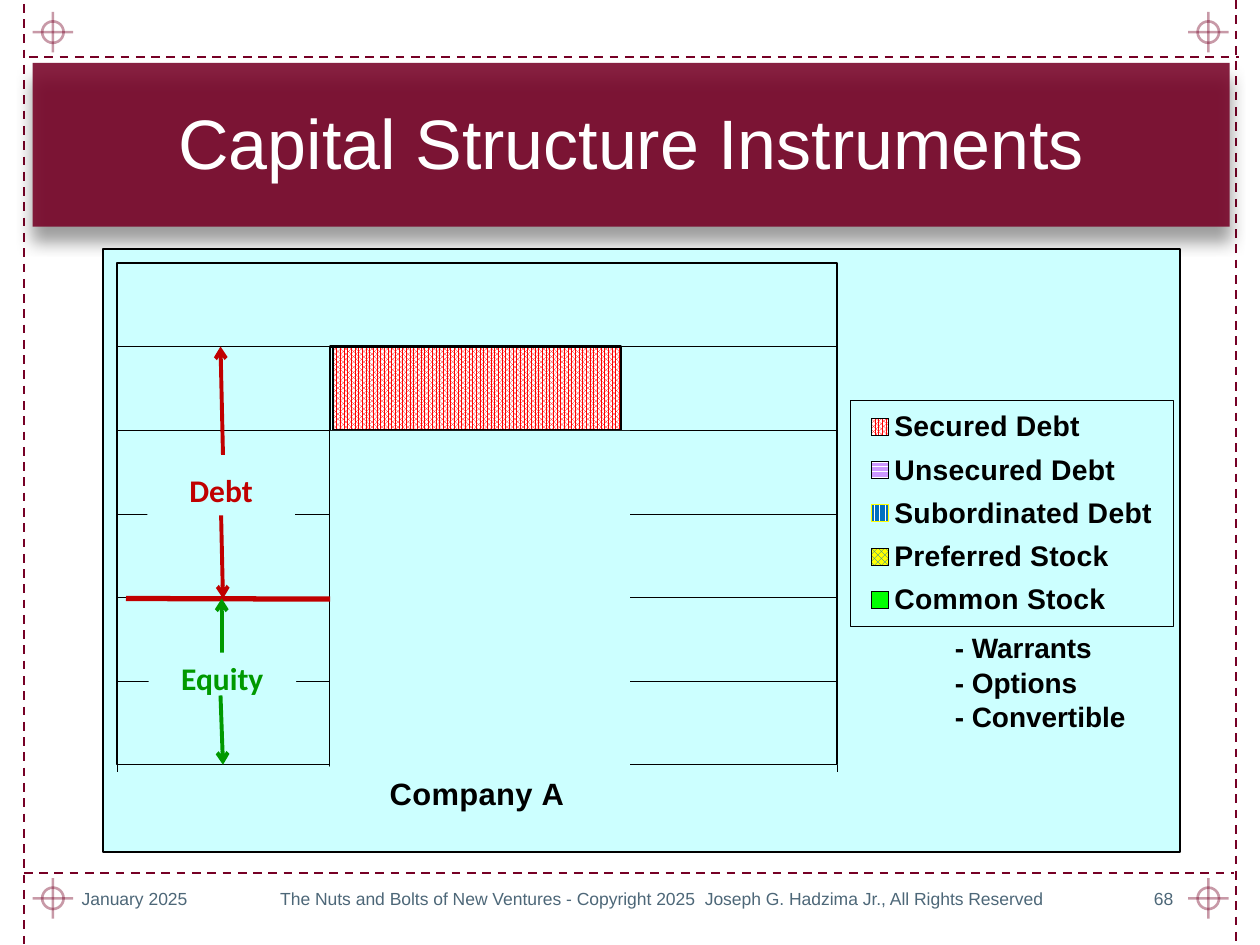
from typing import NamedTuple, Optional

from lxml import etree
from pptx import Presentation
from pptx import util as u
from pptx.chart import data as cdata
from pptx.dml.color import RGBColor
from pptx.enum import chart as ce, dml, shapes, text
from pptx.oxml import parse_xml
from pptx.oxml.ns import nsdecls, qn

COLS, ROWS = 100, 75
CELL = u.Inches(10) // COLS
HUES = {
    "wine": "760025", "ink": "000000", "white": "FFFFFF", "slate": "4D6778",
    "aqua": "CCFFFF", "red": "C00000", "green": "009900", "lime": "00FF00",
    "blue": "0070C0", "yellow": "FFFF00", "violet": "CC99FF", "bright": "FF0000",
}
MID, LEFT, RIGHT = text.PP_ALIGN.CENTER, text.PP_ALIGN.LEFT, text.PP_ALIGN.RIGHT


class Box(NamedTuple):
    """Left, top, width and height in grid cells."""
    x: float
    y: float
    w: float
    h: float


class Line(NamedTuple):
    """Ends in grid cells, with the look of the stroke."""
    x1: float
    y1: float
    x2: float
    y2: float
    hue: str
    width: float
    dash: bool = False
    arrow: bool = False
    alpha: Optional[int] = None


class Type(NamedTuple):
    size: float
    hue: str
    face: str = "Arial"
    bold: bool = False
    align: int = LEFT


class Bar(NamedTuple):
    name: str
    fore: str
    back: str = "white"
    grain: Optional[int] = None
    edge: str = "ink"


GRAIN = dml.MSO_PATTERN
BARS = [
    Bar("Common Stock", "lime"),
    Bar("Preferred Stock", "blue", "yellow", GRAIN.SOLID_DIAMOND),
    Bar("Subordinated Debt", "blue", "white", GRAIN.DARK_VERTICAL, "yellow"),
    Bar("Unsecured Debt", "violet", "white", GRAIN.DARK_HORIZONTAL),
    Bar("Secured Debt", "bright", "white", GRAIN.PERCENT_80),
]
COVERS = [
    Box(26.2, 34.2, 23.8, 26.7), Box(26.2, 40.6, 23.6, 19.7),
    Box(26.4, 47.5, 23, 13.7), Box(26.2, 54, 23.6, 6.6),
]
FOOT = [
    ("The Nuts and Bolts of New Ventures - Copyright 2025  Joseph G. Hadzima Jr., All Rights Reserved",
     Box(15, 69.3, 75, 4), MID),
    ("January 2025", Box(5.5, 69.3, 23.3, 4), LEFT),
    ("68", Box(90, 69.3, 4.1, 4), RIGHT),
]


def rgb(hue: str) -> RGBColor:
    return RGBColor.from_string(HUES[hue])


def cells(*spans: float) -> list:
    return [u.Emu(round(s * CELL)) for s in spans]


def fade(shape, share: int) -> None:
    """Make every colour of the shape see-through."""
    for clr in shape._element.spPr.iter(qn("a:srgbClr")):
        etree.SubElement(clr, qn("a:alpha")).set("val", str(share * 1000))


def stroke(line, hue: str, width: float) -> None:
    line.color.rgb = rgb(hue)
    line.width = u.Pt(width)


def rule(tree, spec_: Line):
    link = tree.add_connector(shapes.MSO_CONNECTOR.STRAIGHT, *cells(*spec_[:4]))
    stroke(link.line, spec_.hue, spec_.width)
    if spec_.dash:
        link.line.dash_style = dml.MSO_LINE.DASH
    if spec_.arrow:
        etree.SubElement(link.line._get_or_add_ln(), qn("a:tailEnd")).set("type", "arrow")
    etree.SubElement(link._element.spPr, qn("a:effectLst"))
    if spec_.alpha:
        fade(link, spec_.alpha)
    return link


def block(tree, box: Box, fill: str = "", edge: str = "", width: float = 1.5,
          kind=shapes.MSO_SHAPE.RECTANGLE):
    shape = tree.add_shape(kind, *cells(*box))
    shape.shadow.inherit = False
    if fill:
        shape.fill.solid()
        shape.fill.fore_color.rgb = rgb(fill)
    else:
        shape.fill.background()
    if edge:
        stroke(shape.line, edge, width)
    else:
        shape.line.fill.background()
    return shape


def write(shape, lines: list, style: Type, anchor=text.MSO_ANCHOR.MIDDLE,
          pitch: float = 0) -> None:
    frame = shape.text_frame
    frame.word_wrap = True
    frame.vertical_anchor = anchor
    for i, words in enumerate(lines):
        para = frame.add_paragraph() if i else frame.paragraphs[0]
        para.alignment = style.align
        if pitch:
            para.line_spacing = u.Pt(pitch)
        run = para.add_run()
        run.text = words
        font(run.font, style)


def font(face, style: Type) -> None:
    face.name, face.size, face.bold = style.face, u.Pt(style.size), style.bold
    face.color.rgb = rgb(style.hue)


def label(tree, box: Box, lines: list, style: Type, **more) -> None:
    write(tree.add_textbox(*cells(*box)), lines, style, **more)


def cross(tree, x: float, y: float) -> None:
    """Draw a registration mark centred at x, y."""
    mark = tree.add_group_shape().shapes
    ring = block(mark, Box(x - .85, y - .85, 1.7, 1.7), edge="wine",
                 kind=shapes.MSO_SHAPE.OVAL)
    fade(ring, 40)
    for dx, dy in ((0, 1.6), (1.6, 0)):
        rule(mark, Line(x - dx, y - dy, x + dx, y + dy, "wine", 1.5, alpha=40))


def layout(x: float, y: float, w: float, h: float, inner: bool = False):
    core = '<c:layoutTarget val="inner"/>' if inner else ""
    keys = ("xMode", "edge"), ("yMode", "edge"), ("x", x), ("y", y), ("w", w), ("h", h)
    core += "".join(f'<c:{k} val="{v}"/>' for k, v in keys)
    return parse_xml(f'<c:layout {nsdecls("c")}><c:manualLayout>{core}</c:manualLayout></c:layout>')


def frame(width: float, fill: str = ""):
    paint = f'<a:solidFill><a:srgbClr val="{HUES[fill]}"/></a:solidFill>' if fill else "<a:noFill/>"
    return parse_xml(
        f'<c:spPr {nsdecls("c", "a")}>{paint}<a:ln w="{u.Pt(width)}"><a:solidFill>'
        f'<a:srgbClr val="{HUES["ink"]}"/></a:solidFill></a:ln></c:spPr>')


def stack(tree, box: Box) -> None:
    """Draw the stacked column of instruments."""
    data = cdata.CategoryChartData()
    data.categories = ["Company A"]
    for bar in BARS:
        data.add_series(bar.name, [100])
    chart = tree.add_chart(ce.XL_CHART_TYPE.COLUMN_STACKED, *cells(*box), data).chart
    chart.has_title = False
    font(chart.font, Type(17.7, "yellow", bold=True))
    plot = chart.plots[0]
    plot.gap_width, plot.overlap, plot.vary_by_categories = 150, 100, False
    for bar, row in zip(BARS, plot.series):
        fill = row.format.fill
        if bar.grain:
            fill.patterned()
            fill.pattern = bar.grain
            fill.back_color.rgb = rgb(bar.back)
        else:
            fill.solid()
        fill.fore_color.rgb = rgb(bar.fore)
        stroke(row.format.line, bar.edge, .98)
    cat, val = chart.category_axis, chart.value_axis
    cat.major_tick_mark = ce.XL_TICK_MARK.OUTSIDE
    font(cat.tick_labels.font, Type(17.7, "ink", bold=True))
    stroke(cat.format.line, "ink", .25)
    val.minimum_scale, val.maximum_scale, val.major_unit = 0, 600, 100
    val.visible, val.has_major_gridlines = False, True
    stroke(val.major_gridlines.format.line, "ink", .25)

    chart.has_legend = True
    key = chart.legend
    key.position, key.include_in_layout = ce.XL_LEGEND_POSITION.RIGHT, False
    font(key.font, Type(16.2, "ink", bold=True))
    key._element.find(qn("c:legendPos")).addnext(layout(.694, .251, .3, .375))
    key._element.find(qn("c:txPr")).addprevious(frame(.25))
    root = chart._chartSpace.find(qn("c:chart"))
    root.addnext(frame(.98, "aqua"))
    area = root.find(qn("c:plotArea"))
    for old in area.findall(qn("c:layout")):
        area.remove(old)
    area.insert(0, layout(.013, .023, .669, .832, True))
    area.append(frame(.98))


def banner(tree) -> None:
    shape = block(tree, Box(2.6, 5, 95, 13), "wine")
    fade(shape, 87)
    glow = shape._element.spPr.find(qn("a:effectLst"))
    glow.append(parse_xml(
        f'<a:outerShdw {nsdecls("a")} blurRad="{u.Pt(9)}" dist="{u.Pt(8)}" dir="5400000" rotWithShape="0">'
        f'<a:srgbClr val="{HUES["ink"]}"><a:alpha val="43000"/></a:srgbClr></a:outerShdw>'))
    label(tree, Box(2.8, 5, 94.6, 12.5), ["Capital Structure Instruments"],
          Type(40, "white", align=MID))


def main() -> None:
    deck = Presentation()
    deck.slide_width, deck.slide_height = cells(COLS, ROWS)
    tree = deck.slides.add_slide(deck.slide_layouts[6]).shapes
    for ends in ((1.9, .3, 1.9, ROWS), (2.3, 4.5, 98.3, 4.5),
                 (98.1, 0, 98.1, ROWS), (1.9, 69.3, 97.9, 69.3)):
        rule(tree, Line(*ends, "wine", 1.25, dash=True))
    for y in (2.55, 71.3):
        for x in (4.2, 95.9):
            cross(tree, x, y)
    banner(tree)
    stack(tree, Box(8.1, 19.7, 85.6, 48))
    label(tree, Box(74.8, 49.5, 23.6, 9.4), ["- Warrants", "- Options", "- Convertible"],
          Type(16, "ink", bold=True), anchor=text.MSO_ANCHOR.TOP, pitch=19.7)
    block(tree, Box(26.2, 27.5, 23.1, 33.3), edge="ink")
    covers = [block(tree, box, "aqua") for box in COVERS]

    debt = tree.add_group_shape().shapes
    rule(debt, Line(17.7, 36.1, 17.5, 27.5, "red", 2.25, arrow=True))
    tag = block(debt, Box(11.7, 36.9, 11.7, 4), "aqua")
    write(tag, ["Debt"], Type(18, "red", "Calibri", True, MID), text.MSO_ANCHOR.TOP)
    down = rule(debt, Line(17.5, 40.9, 17.7, 47.5, "red", 2.25, arrow=True))
    down.begin_connect(tag, 2)
    split = rule(debt, Line(10, 47.5, 26.2, 47.5, "red", 3))
    split.end_connect(covers[0], 1)

    own = tree.add_group_shape().shapes
    rule(own, Line(17.6, 52.5, 17.6, 47.5, "green", 2.25, arrow=True))
    tag = block(own, Box(11.8, 51.8, 11.7, 4), "aqua")
    write(tag, ["Equity"], Type(18, "green", "Calibri", True, MID), text.MSO_ANCHOR.TOP)
    rule(own, Line(17.5, 55.2, 17.7, 60.7, "green", 2.25, arrow=True))

    for words, box, align in FOOT:
        label(tree, box, [words], Type(10, "slate", align=align))
    deck.save("out.pptx")


if __name__ == "__main__":
    main()
